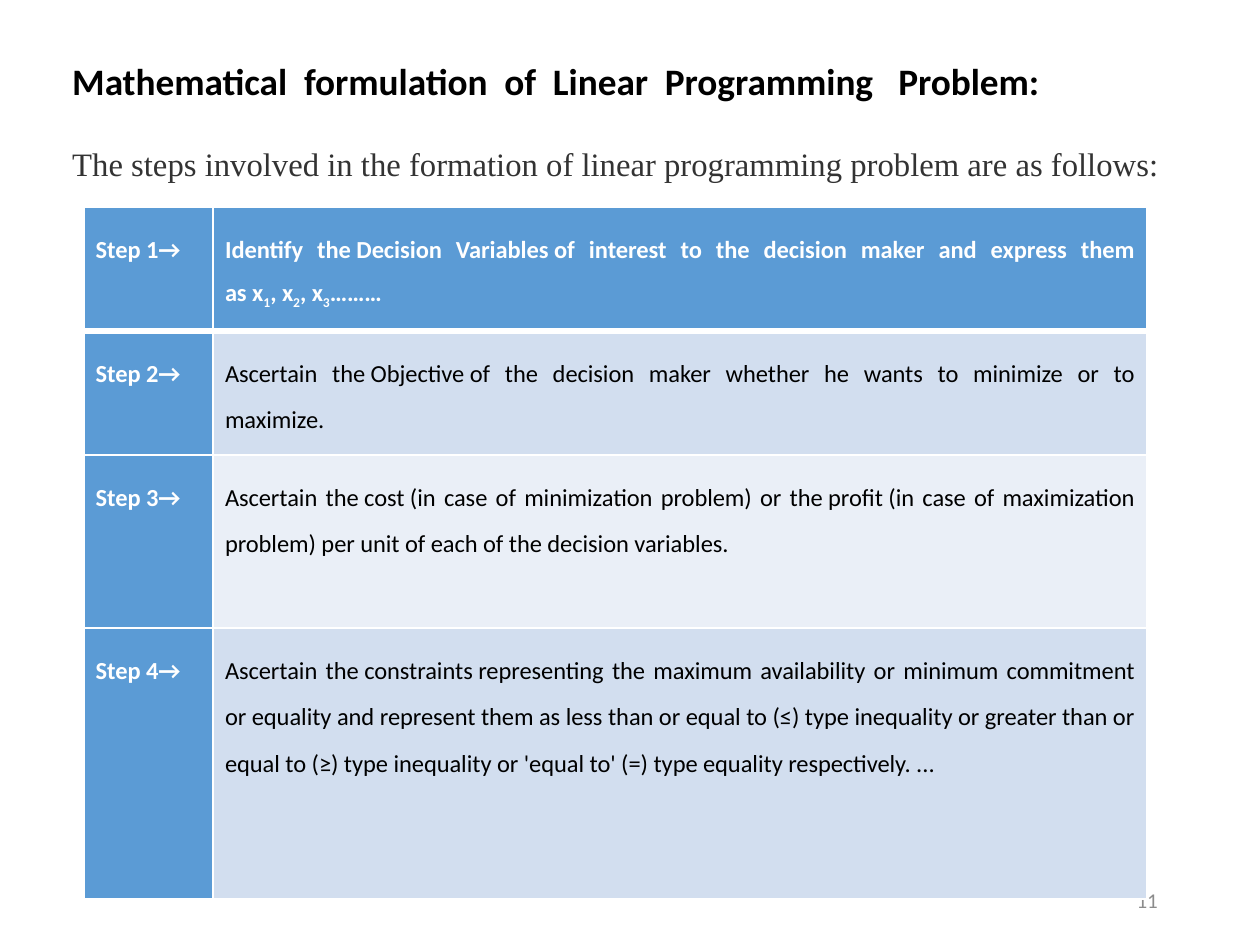
from lxml.etree import SubElement
from pptx import Presentation
from pptx.dml.color import RGBColor
from pptx.enum.text import MSO_ANCHOR as ANCHOR, MSO_AUTO_SIZE as AUTO, PP_ALIGN as ALIGN
from pptx.oxml.ns import qn
from pptx.util import Inches, Pt

BLACK = RGBColor(0x00, 0x00, 0x00)
WHITE = RGBColor(0xFF, 0xFF, 0xFF)
DARK = RGBColor(0x33, 0x33, 0x33)
GREY = RGBColor(0x8C, 0x8C, 0x8C)
BLUE = RGBColor(0x5B, 0x9B, 0xD5)
BAND = RGBColor(0xD2, 0xDE, 0xEF)
PALE = RGBColor(0xEA, 0xEF, 0xF7)
HARD_SPACE = chr(160)

HEADING = dict(name="Calibri", size=Pt(16), bold=True, color=BLACK)
INTRO = dict(name="Times New Roman", size=Pt(14), bold=False, color=DARK)
NUMBER = dict(name="Calibri", size=Pt(9), bold=False, color=GREY)
LABEL = dict(name="Calibri", size=Pt(10.5), bold=True, color=WHITE)
DETAIL = dict(LABEL, bold=False, color=BLACK)

STEPS = [
    (0.74, "Identify the~Decision Variables~of interest to the decision maker and express them "
           "as~x|1|,~x|2|,~x|3|………"),
    (0.74, "Ascertain the~Objective~of the decision maker whether he wants to minimize or to maximize."),
    (1.03, "Ascertain the~cost~(in case of minimization problem) or the~profit~(in case of "
           "maximization problem) per unit of each of the decision variables."),
    (1.61, "Ascertain the~constraints~representing the maximum availability or minimum commitment "
           "or equality and represent them as less than or equal to (≤) type inequality or greater "
           "than or equal to (≥) type inequality or 'equal to' (=) type equality respectively. ..."),
]


class StepSlide:
    """Builds the slide's title, page number and table of steps."""

    def __init__(self, prs):
        self.s = prs.slides.add_slide(prs.slide_layouts[5])

    def run(self, p, text, style):
        """Add a formatted run; a tilde stands for a hard space."""
        r = p.add_run()
        r.text = text.replace("~", HARD_SPACE)
        for key, value in style.items():
            if key == "color":
                r.font.color.rgb = value
            else:
                setattr(r.font, key, value)
        return r

    def title(self, box, lines, gap):
        """Fill the title placeholder with one paragraph per line."""
        sp = self.s.shapes.title
        sp.left, sp.top, sp.width, sp.height = map(Inches, box)
        tf = sp.text_frame
        tf.word_wrap, tf.auto_size, tf.vertical_anchor = True, AUTO.NONE, ANCHOR.MIDDLE
        for i, (text, style) in enumerate(lines):
            p = tf.add_paragraph() if i else tf.paragraphs[0]
            p.alignment, p.line_spacing, p.space_before = ALIGN.LEFT, 1.5, Pt(gap * i)
            self.run(p, text, style)

    def page_number(self, box, text):
        """Add the right-aligned page number."""
        tf = self.s.shapes.add_textbox(*map(Inches, box)).text_frame
        tf.word_wrap, tf.vertical_anchor = True, ANCHOR.MIDDLE
        p = tf.paragraphs[0]
        p.alignment = ALIGN.RIGHT
        self.run(p, text, NUMBER)

    def borders(self, cell, top, bottom):
        """Draw white borders around a cell."""
        tc_pr = cell._tc.get_or_add_tcPr()
        for side, width in dict(lnL=1, lnR=1, lnT=top, lnB=bottom).items():
            ln = SubElement(tc_pr, qn(f"a:{side}"), w=str(Pt(width)))
            fill = SubElement(ln, qn("a:solidFill"))
            SubElement(fill, qn("a:srgbClr"), val=str(WHITE))

    def cell(self, cell, text, style, fill, top, bottom):
        """Fill a cell; parts between bars are subscripts."""
        self.borders(cell, top, bottom)
        cell.fill.solid()
        cell.fill.fore_color.rgb = fill
        for side in ("left", "top", "right", "bottom"):
            setattr(cell, f"margin_{side}", Inches(0.07))
        p = cell.text_frame.paragraphs[0]
        p.alignment, p.line_spacing = ALIGN.JUSTIFY, Pt(19.8)
        for i, part in enumerate(text.split("|")):
            if i % 2:
                r = self.run(p, part, dict(style, size=Pt(10)))
                r._r.get_or_add_rPr().set("baseline", "-25000")
            else:
                self.run(p, part, style)

    def table(self, box, widths, steps):
        """Add the table with one row per step."""
        tbl = self.s.shapes.add_table(len(steps), len(widths), *map(Inches, box)).table
        for col, width in zip(tbl.columns, widths):
            col.width = Inches(width)
        for i, (height, text) in enumerate(steps):
            tbl.rows[i].height = Inches(height)
            top, bottom = 3 if i == 1 else 1, 1 if i else 3
            style = DETAIL if i else LABEL
            fill = (BAND if i % 2 else PALE) if i else BLUE
            self.cell(tbl.cell(i, 0), f"Step {i + 1}→", LABEL, BLUE, top, bottom)
            self.cell(tbl.cell(i, 1), text, style, fill, top, bottom)


def main():
    """Build and save the presentation."""
    prs = Presentation()
    prs.slide_width, prs.slide_height = Inches(7.5), Inches(7.5 * 3 / 4)
    slide = StepSlide(prs)
    slide.page_number((5.3, 5.21, 1.69, 0.3), "11")
    slide.title((0.33, 0.16, 6.75, 0.98), [
        ("Mathematical  formulation  of  Linear  Programming   Problem:", HEADING),
        ("The steps involved in the formation of linear programming problem are as~follows:", INTRO),
    ], 9)
    slide.table((0.5, 1.23, 6.33, 4.12), (0.77, 5.56), STEPS)
    prs.save("out.pptx")


if __name__ == "__main__":
    main()
